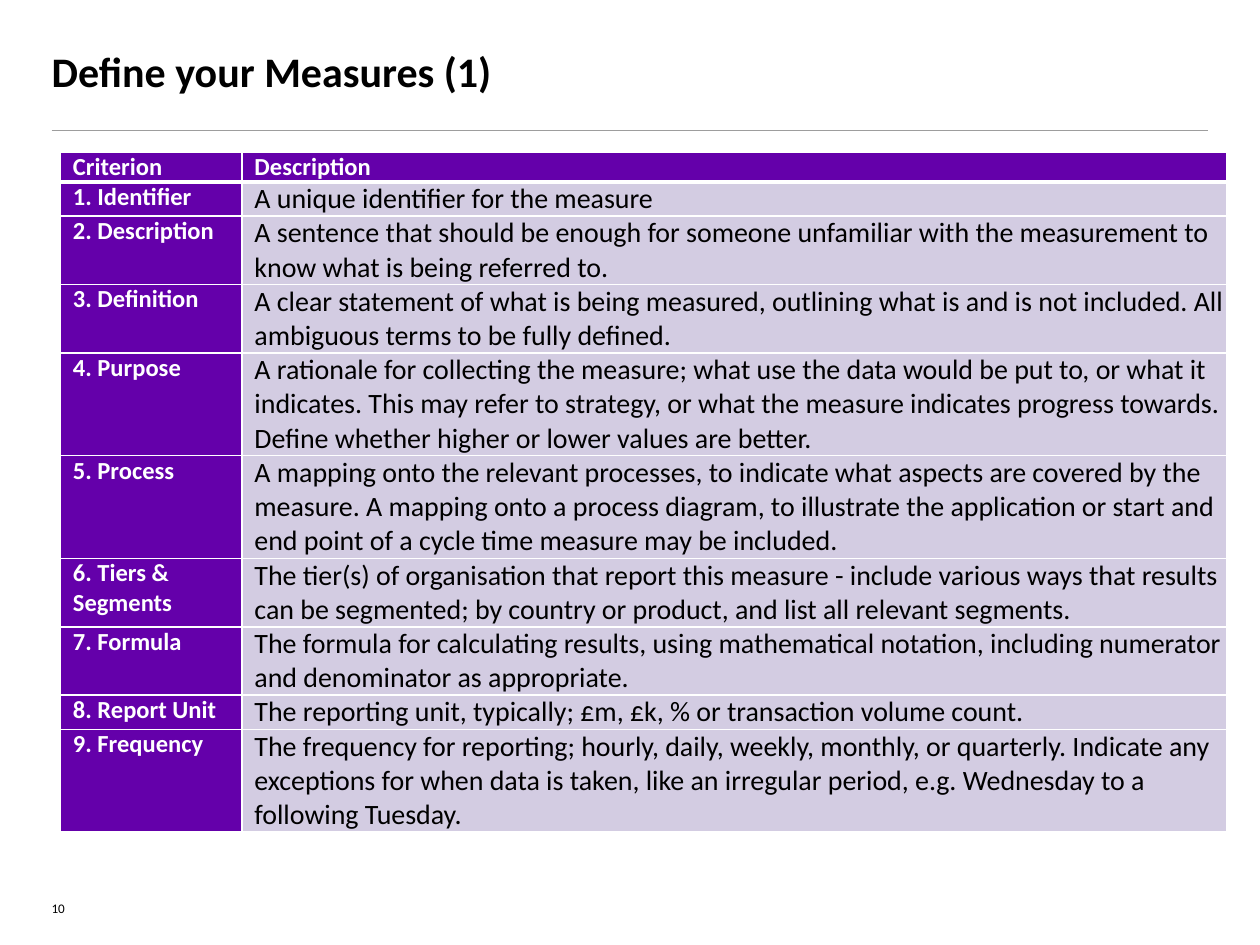
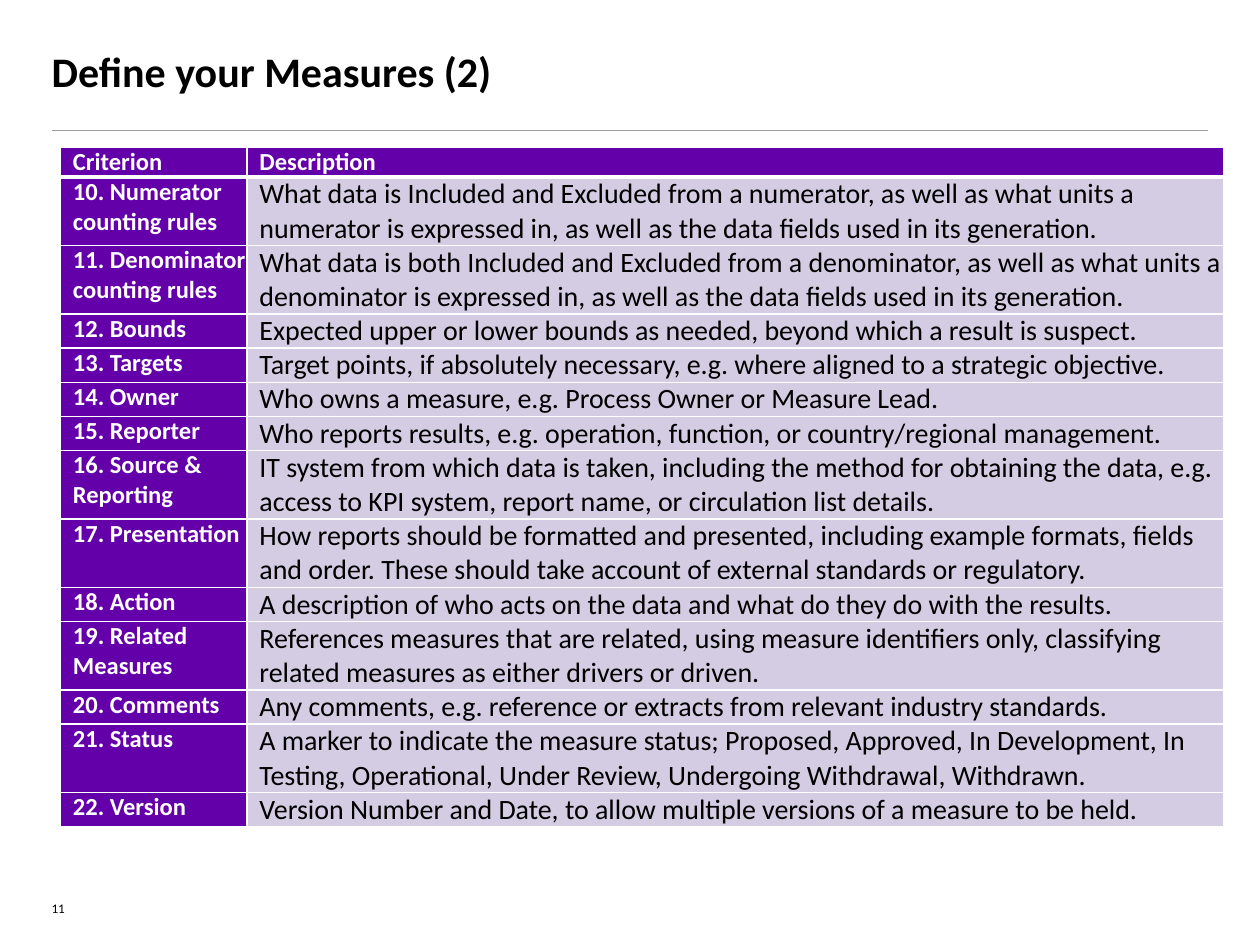
from lxml import etree
from pptx import Presentation
from pptx.dml.color import RGBColor
from pptx.enum.shapes import MSO_CONNECTOR
from pptx.enum.text import MSO_ANCHOR
from pptx.oxml.ns import qn
from pptx.util import Cm, Pt

FONT = "Calibri"
BLACK = RGBColor(0x00, 0x00, 0x00)
WHITE = RGBColor(0xFF, 0xFF, 0xFF)
GREY = RGBColor(0x9D, 0x9D, 0x9D)
PURPLE = RGBColor(0x64, 0x00, 0xAA)
LILAC = RGBColor(0xD3, 0xCC, 0xE2)
STRAIGHT = MSO_CONNECTOR.STRAIGHT
TOP = MSO_ANCHOR.TOP
BOTTOM = MSO_ANCHOR.BOTTOM

MARGIN = 1.04
CONTENT_WIDTH = 23.32
TABLE_LEFT = 1.22
HEADER_HEIGHT = 0.6
LINE_HEIGHT = 0.69
HEADINGS = ("Criterion", "Description")

# Each measure: criterion, description, lines the description takes
FIRST_MEASURES = [
    ("1. Identifier", "A unique identifier for the measure", 1),
    ("2. Description", "A sentence that should be enough for someone unfamiliar with the "
     "measurement to know what is being referred to.", 2),
    ("3. Definition", "A clear statement of what is being measured, outlining what is and is "
     "not included. All ambiguous terms to be fully defined.", 2),
    ("4. Purpose", "A rationale for collecting the measure; what use the data would be put to, "
     "or what it indicates. This may refer to strategy, or what the measure indicates progress "
     "towards. Define whether higher or lower values are better.", 3),
    ("5. Process", "A mapping onto the relevant processes, to indicate what aspects are covered "
     "by the measure. A mapping onto a process diagram, to illustrate the application or start "
     "and end point of a cycle time measure may be included.", 3),
    ("6. Tiers & Segments", "The tier(s) of organisation that report this measure - include "
     "various ways that results can be segmented; by country or product, and list all relevant "
     "segments.", 2),
    ("7. Formula", "The formula for calculating results, using mathematical notation, including "
     "numerator and denominator as appropriate.", 2),
    ("8. Report Unit", "The reporting unit, typically; £m, £k, % or transaction volume count.", 1),
    ("9. Frequency", "The frequency for reporting; hourly, daily, weekly, monthly, or quarterly. "
     "Indicate any exceptions for when data is taken, like an irregular period, e.g. Wednesday "
     "to a following Tuesday.", 3),
]
SECOND_MEASURES = [
    ("10. Numerator counting rules", "What data is Included and Excluded from a numerator, as "
     "well as what units a numerator is expressed in, as well as the data fields used in its "
     "generation.", 2),
    ("11. Denominator counting rules", "What data is both Included and Excluded from a "
     "denominator, as well as what units a denominator is expressed in, as well as the data "
     "fields used in its generation.", 2),
    ("12. Bounds", "Expected upper or lower bounds as needed, beyond which a result is "
     "suspect.", 1),
    ("13. Targets", "Target points, if absolutely necessary, e.g. where aligned to a strategic "
     "objective.", 1),
    ("14. Owner", "Who owns a measure, e.g. Process Owner or Measure Lead.", 1),
    ("15. Reporter", "Who reports results, e.g. operation, function, or country/regional "
     "management.", 1),
    ("16. Source & Reporting", "IT system from which data is taken, including the method for "
     "obtaining the data, e.g. access to KPI system, report name, or circulation list "
     "details.", 2),
    ("17. Presentation", "How reports should be formatted and presented, including example "
     "formats, fields and order. These should take account of external standards or "
     "regulatory.", 2),
    ("18. Action", "A description of who acts on the data and what do they do with the "
     "results.", 1),
    ("19. Related Measures", "References measures that are related, using measure identifiers "
     "only, classifying related measures as either drivers or driven.", 2),
    ("20. Comments", "Any comments, e.g. reference or extracts from relevant industry "
     "standards.", 1),
    ("21. Status", "A marker to indicate the measure status; Proposed, Approved, In Development, "
     "In Testing, Operational, Under Review, Undergoing Withdrawal, Withdrawn.", 2),
    ("22. Version", "Version Number and Date, to allow multiple versions of a measure to be "
     "held.", 1),
]


class MeasureDeck:
    """Holds the deck, its style and the slide being built."""

    def __init__(self):
        """Start an empty deck of 4:3 slides."""
        self.deck = Presentation()
        self.deck.slide_width, self.deck.slide_height = Cm(25.4), Cm(19.05)
        self.page = None

    def add_page(self, title, number):
        """Add a slide with its title, rule and page number."""
        self.page = self.deck.slides.add_slide(self.deck.slide_layouts[6])
        self.add_rule(2.62)
        self.add_text(title, (MARGIN, 0.91, CONTENT_WIDTH, 1.19), 24, bold=True)
        self.add_text(str(number), (MARGIN, 17.68, 0.74, 0.79), 7.5, anchor=BOTTOM)

    def add_rule(self, top):
        """Draw a thin grey line across the content width."""
        rule = self.page.shapes.add_connector(
            STRAIGHT, Cm(MARGIN), Cm(top), Cm(MARGIN + CONTENT_WIDTH), Cm(top))
        rule.line.color.rgb = GREY
        rule.line.width = Pt(0.25)
        etree.SubElement(rule._element.spPr, qn("a:effectLst"))

    def add_text(self, text, place, size, bold=False, anchor=TOP):
        """Add a text box without insets."""
        box = self.page.shapes.add_textbox(*(Cm(length) for length in place))
        frame = box.text_frame
        frame.word_wrap = True
        frame.vertical_anchor = anchor
        frame.margin_left = frame.margin_right = frame.margin_top = frame.margin_bottom = 0
        self.set_text(frame, text, size, BLACK, bold)

    def set_text(self, frame, text, size, color, bold):
        """Put one styled paragraph into a text frame."""
        para = frame.paragraphs[0]
        para.text = text
        para.font.name, para.font.size, para.font.bold = FONT, Pt(size), bold
        para.font.color.rgb = color

    def add_measures(self, measures, top, widths):
        """Add the table of criteria and their descriptions."""
        heights = [HEADER_HEIGHT] + [LINE_HEIGHT * lines for *_, lines in measures]
        table = self.page.shapes.add_table(
            len(heights), len(widths), Cm(TABLE_LEFT), Cm(top),
            Cm(sum(widths)), Cm(sum(heights))).table
        table.first_col, table.horz_banding = True, False
        for column, width in zip(table.columns, widths):
            column.width = Cm(width)
        for row, height in zip(table.rows, heights):
            row.height = Cm(height)
        texts = [HEADINGS] + [measure[:2] for measure in measures]
        for row_index, row_texts in enumerate(texts):
            for column_index, text in enumerate(row_texts):
                is_heading = row_index == 0 or column_index == 0
                cell = table.cell(row_index, column_index)
                self.style_cell(cell, text, is_heading)
                self.add_borders(cell, top=3 if row_index == 1 else 1,
                                 bottom=3 if row_index == 0 else 1)

    def style_cell(self, cell, text, is_heading):
        """Fill a cell and set its text as a heading or a description."""
        cell.margin_left = Cm(0.25)
        cell.margin_right = cell.margin_top = cell.margin_bottom = 0
        cell.fill.solid()
        cell.fill.fore_color.rgb = PURPLE if is_heading else LILAC
        size, color = (14, WHITE) if is_heading else (16, BLACK)
        self.set_text(cell.text_frame, text, size, color, is_heading)

    def add_borders(self, cell, top, bottom):
        """Give a cell white borders, with widths in points."""
        properties = cell._tc.get_or_add_tcPr()
        sides = (("a:lnL", 1), ("a:lnR", 1), ("a:lnT", top), ("a:lnB", bottom))
        for position, (tag, width) in enumerate(sides):
            border = etree.Element(qn(tag), w=str(Pt(width)))
            fill = etree.SubElement(border, qn("a:solidFill"))
            etree.SubElement(fill, qn("a:srgbClr"), val=str(WHITE))
            properties.insert(position, border)


def main():
    """Build both slides and save the deck."""
    builder = MeasureDeck()
    builder.add_page("Define your Measures (1)", 10)
    builder.add_measures(FIRST_MEASURES, 3.07, (3.66, 19.84))
    builder.add_page("Define your Measures (2)", 11)
    builder.add_measures(SECOND_MEASURES, 2.97, (3.76, 19.69))
    builder.deck.save("out.pptx")


if __name__ == "__main__":
    main()
